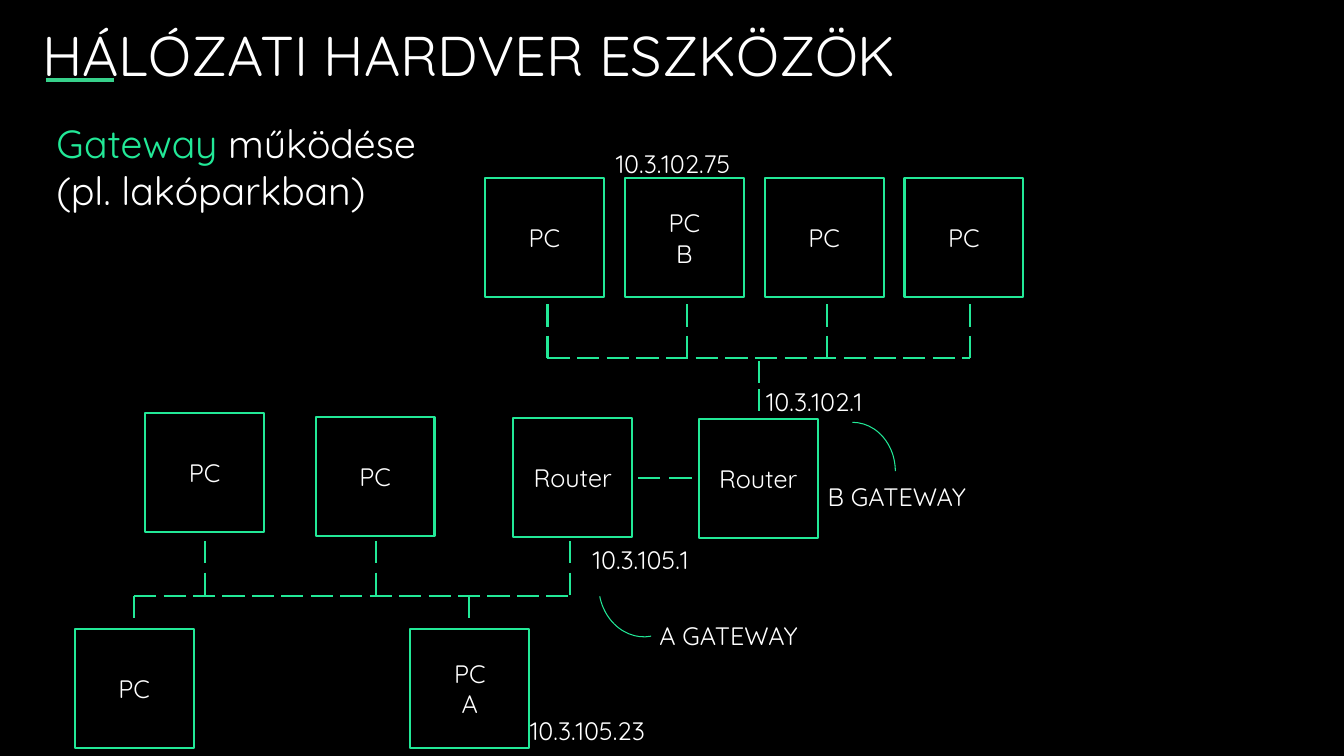
from dataclasses import dataclass

from lxml.etree import SubElement
from pptx import Presentation
from pptx.dml.color import RGBColor
from pptx.enum.shapes import MSO_CONNECTOR, MSO_SHAPE
from pptx.enum.text import MSO_ANCHOR, PP_ALIGN
from pptx.oxml.ns import qn
from pptx.util import Inches, Pt


@dataclass(frozen=True)
class Theme:
    font: str = "Quicksand"
    background: RGBColor = RGBColor(0x00, 0x00, 0x00)
    text: RGBColor = RGBColor(0xFF, 0xFF, 0xFF)
    accent: RGBColor = RGBColor(0x22, 0xE8, 0x97)
    underline: RGBColor = RGBColor(0x37, 0xD1, 0x8B)
    title_size: int = 40
    subtitle_size: int = 28
    label_size: int = 18
    line_width: float = 1.5
    thin_width: float = 0.75
    underline_width: float = 3


BOX = 1.18
DASH = 0.22


class NetworkSlide:
    def __init__(self, prs, theme):
        self.theme = theme
        self.s = prs.slides.add_slide(prs.slide_layouts[6])
        fill = self.s.background.fill
        fill.solid()
        fill.fore_color.rgb = theme.background

    def style_run(self, r, size, color=None):
        r.font.name = self.theme.font
        r.font.size = Pt(size)
        r.font.color.rgb = color or self.theme.text

    def text(self, x, y, w, h, runs, size, anchor=MSO_ANCHOR.TOP):
        """Add a text box from (text, colour) runs."""
        sp = self.s.shapes.add_textbox(Inches(x), Inches(y), Inches(w), Inches(h))
        tf = sp.text_frame
        tf.word_wrap = True
        tf.vertical_anchor = anchor
        for words, color in runs:
            r = tf.paragraphs[0].add_run()
            r.text = words
            self.style_run(r, size, color)

    def label(self, x, y, w, words):
        self.text(x, y, w, 0.4, [(words, None)], self.theme.label_size)

    def outline(self, kind, x, y, w, h, width):
        sp = self.s.shapes.add_shape(kind, Inches(x), Inches(y), Inches(w), Inches(h))
        sp.shadow.inherit = False
        sp.fill.background()
        sp.line.color.rgb = self.theme.accent
        sp.line.width = Pt(width)
        return sp

    def device(self, x, y, words):
        sp = self.outline(MSO_SHAPE.RECTANGLE, x, y, BOX, BOX, self.theme.line_width)
        tf = sp.text_frame
        tf.text = words
        tf.word_wrap = True
        tf.vertical_anchor = MSO_ANCHOR.MIDDLE
        for p in tf.paragraphs:
            p.alignment = PP_ALIGN.CENTER
            for r in p.runs:
                self.style_run(r, self.theme.label_size)

    def arc(self, x, y, rotation=0):
        sp = self.outline(MSO_SHAPE.ARC, x, y, 0.85, 0.97, self.theme.thin_width)
        sp.rotation = rotation

    def line(self, x1, y1, x2, y2, color=None, width=None):
        c = self.s.shapes.add_connector(
            MSO_CONNECTOR.STRAIGHT, Inches(x1), Inches(y1), Inches(x2), Inches(y2))
        c.line.color.rgb = color or self.theme.accent
        c.line.width = Pt(width or self.theme.line_width)
        SubElement(c._element.spPr, qn("a:effectLst"))

    def dashes_across(self, x, y, count, pitch):
        for i in range(count):
            start = x + i * pitch
            self.line(start, y, start + DASH, y)

    def dashes_down(self, x, y, count=2, pitch=0.31):
        for i in range(count):
            start = y + i * pitch
            self.line(x, start, x, start + DASH)


def main():
    prs = Presentation()
    prs.slide_width, prs.slide_height = Inches(13.33), Inches(7.5)
    theme = Theme()
    net = NetworkSlide(prs, theme)

    # Title and subtitle
    net.text(0.32, -0.5, 12.76, 2.08, [("HÁLÓZATI HARDVER ESZKÖZÖK", None)],
             theme.title_size, MSO_ANCHOR.MIDDLE)
    net.line(0.46, 0.79, 1.13, 0.79, theme.underline, theme.underline_width)
    net.text(0.46, 1.13, 4.35, 1.04,
             [("Gateway ", theme.accent), ("működése (pl. lakóparkban)", None)],
             theme.subtitle_size)

    # Network B: four computers on one bus
    for i, words in enumerate(["PC", "PC\nB", "PC", "PC"]):
        net.device(4.81 + i * 1.387, 1.77, words)
    for x in (5.43, 6.81, 8.2, 9.62):
        net.dashes_down(x, 3.02)
    net.dashes_across(5.43, 3.55, 14, 0.294)
    net.line(9.54, 3.55, 9.62, 3.55)
    net.dashes_down(7.53, 3.58, pitch=0.28)

    # Routers and the link between them
    net.device(5.09, 4.15, "Router")
    net.device(6.93, 4.16, "Router")
    net.dashes_across(6.33, 4.74, 2, 0.31)

    # Network A: computers above and below the bus
    for x, y, words in [(1.44, 4.1, "PC"), (3.13, 4.14, "PC"),
                        (0.74, 6.24, "PC"), (4.07, 6.24, "PC\nA")]:
        net.device(x, y, words)
    for x in (2.03, 3.73, 5.65):
        net.dashes_down(x, 5.37)
    for x in (1.33, 4.65):
        net.dashes_down(x, 5.91, count=1)
    net.dashes_across(1.33, 5.91, 15, 0.292)

    # Addresses and gateway names
    for x, y, w, words in [
        (6.01, 1.42, 1.77, "10.3.102.75"),
        (7.5, 3.78, 1.4, "10.3.102.1"),
        (8.11, 4.73, 2.22, "B GATEWAY"),
        (5.78, 5.35, 1.4, "10.3.105.1"),
        (6.44, 6.1, 2.22, "A GATEWAY"),
        (5.16, 7.05, 1.77, "10.3.105.23"),
    ]:
        net.label(x, y, w, words)
    net.arc(8.03, 4.19)
    net.arc(5.94, 5.35, rotation=169)

    prs.save("out.pptx")


if __name__ == "__main__":
    main()
